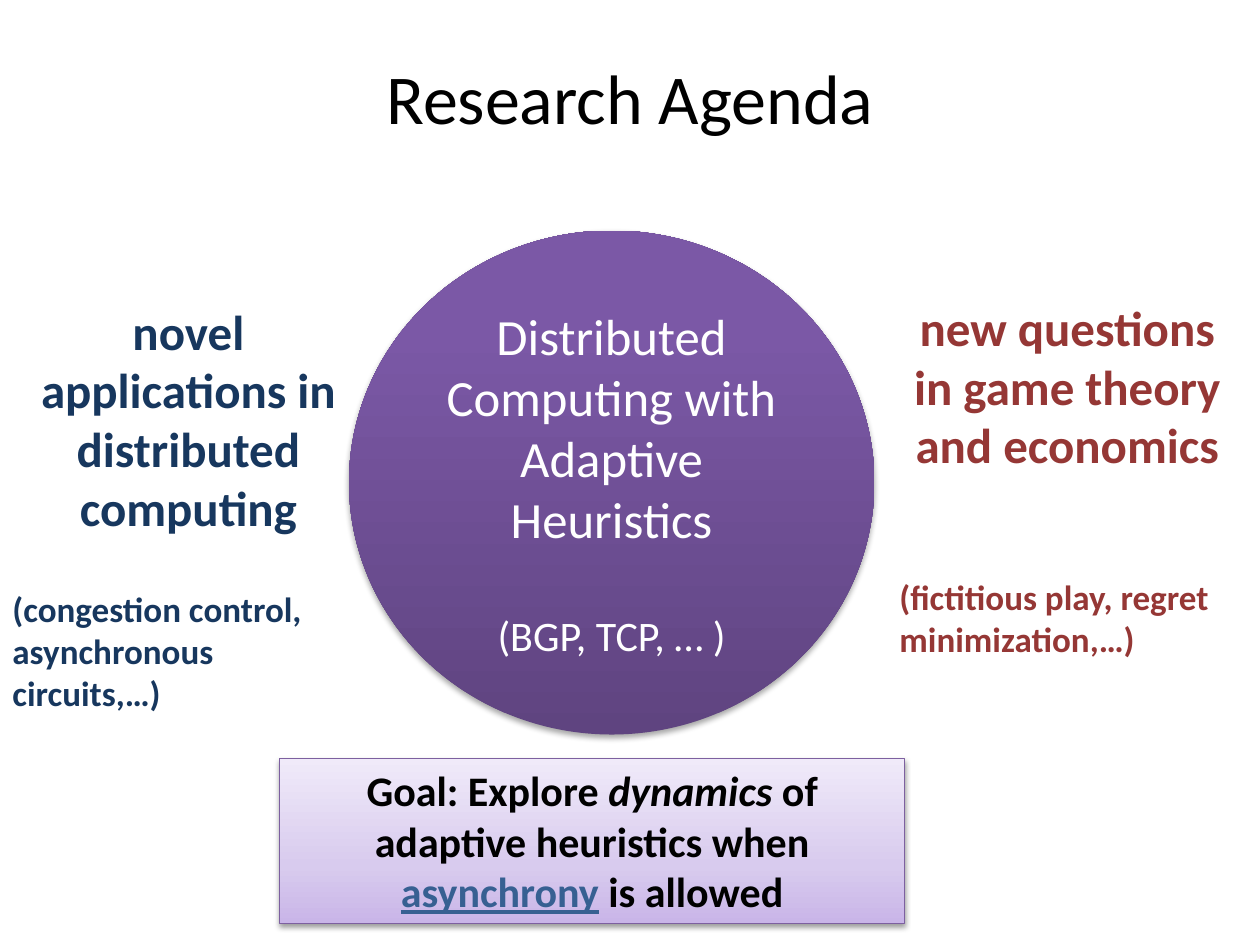
from lxml import etree
from pptx import Presentation
from pptx.dml.color import RGBColor
from pptx.enum.shapes import MSO_SHAPE
from pptx.enum.text import MSO_ANCHOR, PP_ALIGN
from pptx.oxml.ns import qn
from pptx.util import Inches, Pt

OVAL, RECT = MSO_SHAPE.OVAL, MSO_SHAPE.RECTANGLE
TOP, MIDDLE = MSO_ANCHOR.TOP, MSO_ANCHOR.MIDDLE
LEFT, CENTER = PP_ALIGN.LEFT, PP_ALIGN.CENTER
FONT = "Calibri"
NAVY, RED, BLUE = "17375E", "953735", "376092"
BLACK, WHITE, PURPLE = "000000", "FFFFFF", "7D60A0"
DARK = [(0, "5F4480"), (80, "7B58A6"), (100, "7C57A8")]
PALE = [(0, "C9B5E8"), (35, "D8CBEE"), (100, "F0EAF9")]


def color(code):
    return RGBColor.from_string(code)


def style(run, size, code, bold=False):
    font = run.font
    font.name, font.size, font.bold = FONT, Pt(size), bold
    font.color.rgb = color(code)


def write(para, text, size, code, bold=False, align=CENTER, gap=0):
    para.text = text
    para.alignment = align
    para.space_before = Pt(gap)
    style(para.runs[0], size, code, bold)


def node(parent, tag, **attrs):
    return etree.SubElement(parent, qn(tag), {k: str(v) for k, v in attrs.items()})


def shade(shape, stops):
    """Fill upward with the stops, which replace the default pair."""
    shape.fill.gradient()
    grad = shape._element.spPr.find(qn("a:gradFill"))
    items = grad.find(qn("a:gsLst"))
    for old in list(items):
        items.remove(old)
    for place, code in stops:
        stop = node(items, "a:gs", pos=place * 1000)
        node(stop, "a:srgbClr", val=code)
    grad.find(qn("a:lin")).set("ang", "16200000")


def cast(shape, alpha, dist):
    """Add a soft shadow straight below the shape."""
    shape.shadow.inherit = False
    effects = shape._element.spPr.find(qn("a:effectLst"))
    shadow = node(effects, "a:outerShdw", blurRad=Pt(3.1), dist=Pt(dist),
                  dir=5400000, rotWithShape=0)
    tint = node(shadow, "a:srgbClr", val=BLACK)
    node(tint, "a:alpha", val=alpha * 1000)


def add_title(slide, box):
    title = slide.shapes.title
    title.left, title.top, title.width, title.height = box
    frame = title.text_frame
    frame.vertical_anchor = MIDDLE
    write(frame.paragraphs[0], "Research Agenda", 40, BLACK)


def add_core(slide, box):
    oval = slide.shapes.add_shape(OVAL, *box)
    shade(oval, DARK)
    oval.line.fill.background()
    cast(oval, 35, 1.8)
    frame = oval.text_frame
    frame.word_wrap = True
    frame.vertical_anchor = MIDDLE
    write(frame.paragraphs[0], "Distributed Computing with Adaptive Heuristics", 29, WHITE)
    write(frame.add_paragraph(), "(BGP, TCP, … )", 24, WHITE, gap=35)


def add_goal(slide, box):
    rect = slide.shapes.add_shape(RECT, *box)
    shade(rect, PALE)
    rect.line.color.rgb = color(PURPLE)
    rect.line.width = Pt(0.75)
    cast(rect, 38, 1.6)
    frame = rect.text_frame
    frame.word_wrap = True
    frame.vertical_anchor = TOP
    para = frame.paragraphs[0]
    para.alignment = CENTER
    for text in ("Goal: Explore ", "dynamics", " of adaptive heuristics when ",
                 "asynchrony", " is allowed"):
        run = para.add_run()
        run.text = text
        style(run, 24, BLACK, True)
    para.runs[1].font.italic = True
    link = para.runs[3].font
    link.underline = True
    link.color.rgb = color(BLUE)


def add_side(slide, box, heads, note, code, gap):
    frame = slide.shapes.add_textbox(*box).text_frame
    frame.word_wrap = True
    para = frame.paragraphs[0]
    for head in heads:
        write(para, head, 28, code, True)
        para = frame.add_paragraph()
    write(para, note, 20, code, True, LEFT, gap)


def area(*sizes):
    return [Inches(size) for size in sizes]


def main():
    deck = Presentation()
    deck.slide_width, deck.slide_height = Inches(10), Inches(7.5)
    slide = deck.slides.add_slide(deck.slide_layouts[5])
    # Title
    add_title(slide, area(0.5, 0.14, 9, 1.25))
    # Central topic and goal
    add_core(slide, area(2.77, 1.83, 4.17, 4))
    add_goal(slide, area(2.22, 6.02, 4.96, 1.31))
    # Topics on either side
    add_side(slide, area(0, 2.34, 2.99, 3.4),
             ["novel applications in distributed computing"],
             "(congestion control, asynchronous circuits,…)", NAVY, 29)
    add_side(slide, area(7.04, 2.31, 2.86, 3),
             ["new questions", "in game theory and economics"],
             "(fictitious play, regret minimization,…)", RED, 58)
    deck.save("out.pptx")


if __name__ == "__main__":
    main()
